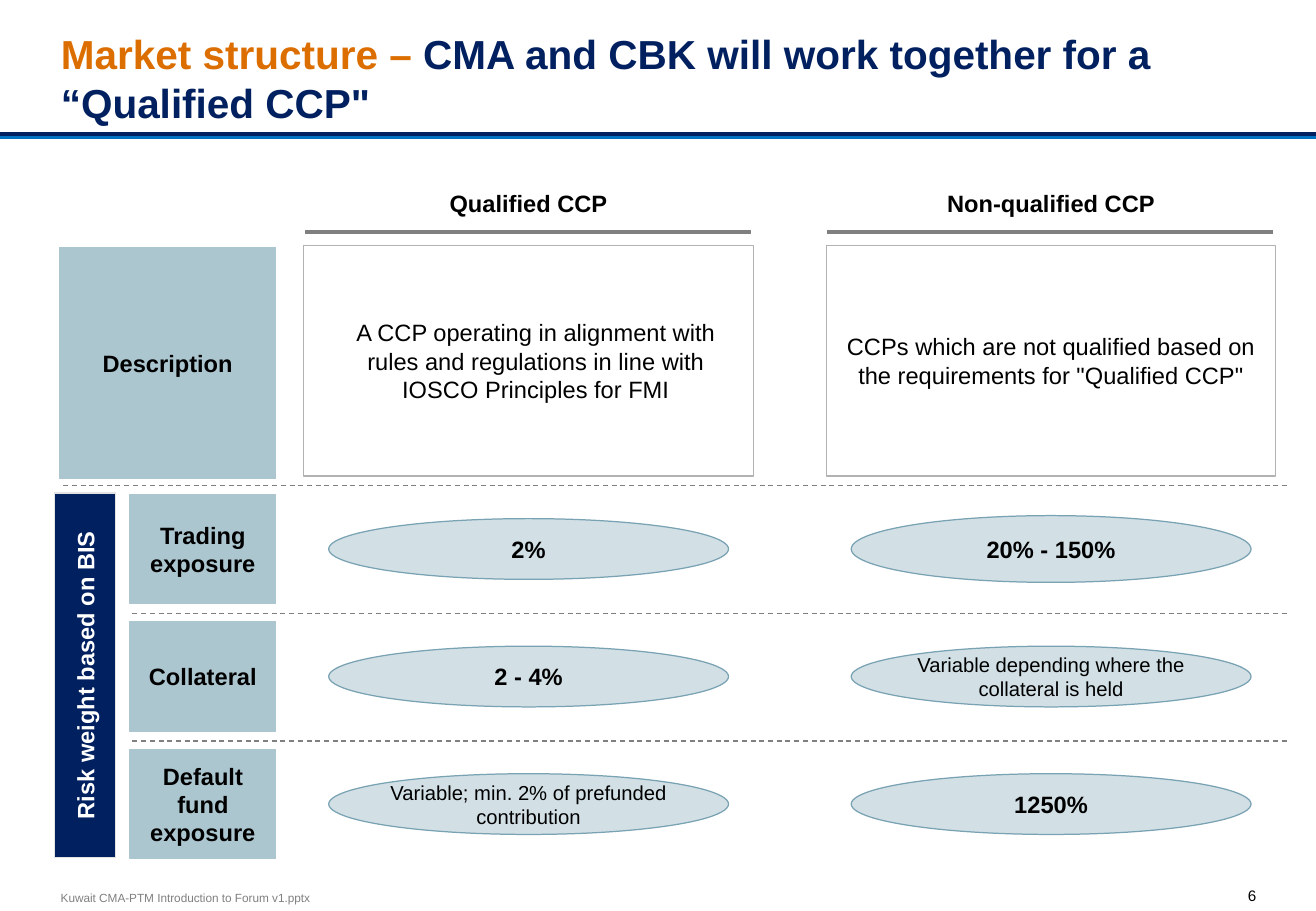
from lxml.etree import SubElement
from pptx import Presentation
from pptx.dml.color import RGBColor
from pptx.enum.dml import MSO_LINE_DASH_STYLE as Dash
from pptx.enum.shapes import MSO_CONNECTOR as Conn, MSO_SHAPE as Kind
from pptx.enum.text import MSO_ANCHOR as Anchor, MSO_AUTO_SIZE as Fit, PP_ALIGN as Align
from pptx.oxml.ns import qn
from pptx.util import Inches, Pt

NAVY = RGBColor(0x00, 0x20, 0x60)
BLUE = RGBColor(0x00, 0x70, 0xC0)
ORANGE = RGBColor(0xDC, 0x6E, 0x00)
TEAL = RGBColor(0xAC, 0xC6, 0xD0)
PALE = RGBColor(0xD2, 0xE0, 0xE6)
RIM = RGBColor(0x79, 0xA2, 0xB3)
GRAY = RGBColor(0x80, 0x80, 0x80)
SILVER = RGBColor(0xB2, 0xB2, 0xB2)
LIGHT = RGBColor(0xE2, 0xE2, 0xE2)
BLACK = RGBColor(0, 0, 0)
WHITE = RGBColor(0xFF, 0xFF, 0xFF)

TITLE = [("Market structure – ", ORANGE),
         ("CMA and CBK will work together for a “Qualified CCP\"", NAVY)]
HEADS = ["Qualified CCP", "Non-qualified CCP"]
ABOUT = ["A CCP operating in alignment with rules and regulations in line with "
         "IOSCO Principles for FMI",
         "CCPs which are not qualified based on the requirements for \"Qualified CCP\""]
BAND = "Risk weight based on BIS"
RISKS = [("Trading exposure", ["2%", "20% - 150%"]),
         ("Collateral", ["2 - 4%", "Variable depending where the collateral is held"]),
         ("Default fund exposure",
          ["Variable; min. 2% of prefunded contribution", "1250%"])]
FOOTER = "Kuwait CMA-PTM Introduction to Forum v1.pptx"
PAGE = "6"

WIDE, HIGH = 10.83, 7.5
COLS, COL_W = [2.5, 6.8], 3.7
LABEL_X, LABEL_W = 1.07, 1.2
DESC_Y, DESC_H = 2.02, 1.9
ROW_Y, ROW_H, ROW_STEP = 4.07, 0.9, 1.05
OVAL_W, OVAL_H = 3.29, 0.5
PAD = 0.1

deck = Presentation()
deck.slide_width, deck.slide_height = Inches(WIDE), Inches(HIGH)
slide = deck.slides.add_slide(deck.slide_layouts[5])


def write(shape, text, size=14, bold=False, color=BLACK, align=Align.CENTER,
          anchor=Anchor.MIDDLE, pad=(PAD, PAD), wrap=True, indent=0):
    """Fill a shape with one paragraph; text is a string or (words, colour) pairs."""
    frame = shape.text_frame
    frame.auto_size, frame.word_wrap = Fit.NONE, wrap
    frame.vertical_anchor = anchor
    frame.margin_left = frame.margin_right = Inches(pad[0])
    frame.margin_top = frame.margin_bottom = Inches(pad[1])
    para = frame.paragraphs[0]
    para.alignment = align
    if indent:
        props = para._p.get_or_add_pPr()
        props.set("marL", str(Inches(indent)))
        props.set("indent", "0")
    for words, tint in [(text, color)] if isinstance(text, str) else text:
        run = para.add_run()
        run.text = words
        font = run.font
        font.name, font.size, font.bold = "Arial", Pt(size), bold
        font.color.rgb = tint


def block(x, y, w, h, text, fill=None, edge=None, kind=Kind.RECTANGLE, **style):
    shape = slide.shapes.add_shape(kind, Inches(x), Inches(y), Inches(w), Inches(h))
    shape.shadow.inherit = False
    if fill is None:
        shape.fill.background()
    else:
        shape.fill.solid()
        shape.fill.fore_color.rgb = fill
    if edge is None:
        shape.line.fill.background()
    else:
        shape.line.color.rgb = edge
        shape.line.width = Pt(0.75)
    write(shape, text, **style)
    return shape


def rule(x, y, end, color=GRAY, width=0.75, dash=None):
    line = slide.shapes.add_connector(
        Conn.STRAIGHT, Inches(x), Inches(y), Inches(end), Inches(y))
    line.line.color.rgb, line.line.width = color, Pt(width)
    if dash:
        line.line.dash_style = dash
    SubElement(line._element.spPr, qn("a:effectLst"))


def label(x, y, w, h, text, **style):
    box = slide.shapes.add_textbox(Inches(x), Inches(y), Inches(w), Inches(h))
    write(box, text, pad=(0, 0), **style)


# Title and frame
title = slide.shapes.title
title.left, title.top = Inches(0.5), Inches(0.18)
title.width, title.height = Inches(9.83), Inches(0.91)
write(title, TITLE, size=24, bold=True, align=Align.LEFT,
      anchor=Anchor.BOTTOM, pad=(0, 0.05))
rule(0, 1.13, WIDE, BLUE, 2.25)
rule(0, 1.1, WIDE, NAVY, 2.25)
label(0.5, 7.33, 4, 0.12, FOOTER, size=7, color=GRAY, align=Align.LEFT)
label(9.34, 7.3, 1, 0.14, PAGE, size=9, align=Align.RIGHT, anchor=Anchor.TOP)

# Column heads and descriptions
block(0.49, DESC_Y + 0.02, 1.78, DESC_H, "Description", TEAL, TEAL, bold=True)
for x, head, about, indent in zip(COLS, HEADS, ABOUT, (0.12, 0)):
    block(x, 1.46, COL_W, 0.43, head, bold=True, anchor=Anchor.BOTTOM)
    rule(x + 0.01, 1.91, x + COL_W - 0.02, width=2.25)
    block(x, DESC_Y, COL_W, DESC_H, about, edge=SILVER, indent=indent)

# Risk weights
band = block(0.45, 4.06, 0.5, 3, BAND, NAVY, LIGHT, bold=True, color=WHITE)
band._element.txBody.bodyPr.set("vert", "vert270")
for i, (name, cells) in enumerate(RISKS):
    y = ROW_Y + i * ROW_STEP
    block(LABEL_X, y, LABEL_W, ROW_H, name, TEAL, TEAL, bold=True)
    rule(LABEL_X + 0.02 if i else 0.52, y - 0.07, 10.6, dash=Dash.DASH)
    for x, cell in zip(COLS, cells):
        long = len(cell) > 20
        tall = OVAL_H + (0.05 if cell == "20% - 150%" else 0)
        block(x + (COL_W - OVAL_W) / 2, y + (ROW_H - tall) / 2, OVAL_W, tall, cell,
              PALE, RIM, Kind.OVAL, size=12 if long else 14, bold=not long,
              pad=(0, PAD))

deck.save("out.pptx")
